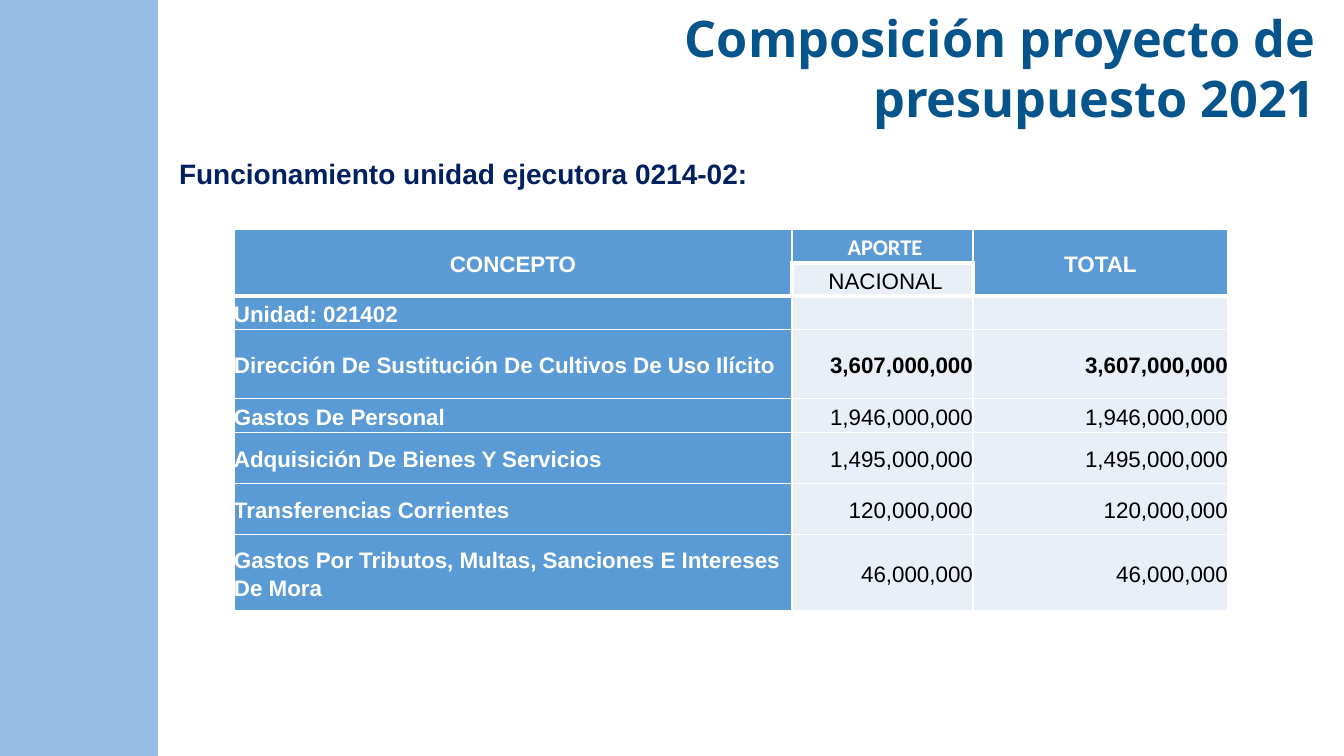
"""Builds the 2021 budget slide for unit 0214-02."""
from lxml import etree
from pptx import Presentation
from pptx import util as u
from pptx.dml.color import RGBColor
from pptx.enum import shapes, text
from pptx.oxml.ns import qn

SCALE = 914400 / 100.8
HUES = {"band": "96BDE3", "title": "05548B", "sub": "002060", "head": "5B9BD5",
        "pale": "E9EFF7", "white": "FFFFFF", "black": "000000"}
COLS = [558, 181, 255]
ROWS = [34, 33, 34, 69, 34, 51, 51, 76]
CELLS = [
    ("CONCEPTO", " APORTE", "TOTAL"),
    ("", " NACIONAL", ""),
    ("Unidad: 021402", "", ""),
    ("Dirección De Sustitución De Cultivos De Uso Ilícito", "3,607,000,000", "3,607,000,000"),
    ("Gastos De Personal", "1,946,000,000", "1,946,000,000"),
    ("Adquisición De Bienes Y Servicios", "1,495,000,000", "1,495,000,000"),
    ("Transferencias Corrientes", "120,000,000", "120,000,000"),
    ("Gastos Por Tributos, Multas, Sanciones E Intereses De Mora", "46,000,000", "46,000,000"),
]


def px(n):
    return u.Emu(round(n * SCALE))


def hue(name):
    return RGBColor.from_string(HUES[name])


def style(para, font, size, color, bold, align):
    para.alignment = align
    for run in para.runs:
        run.font.name, run.font.size, run.font.bold = font, u.Pt(size), bold
        run.font.color.rgb = hue(color)


def write(shape, box, words, font, size, color, align):
    shape.left, shape.top, shape.width, shape.height = map(px, box)
    frame = shape.text_frame
    frame.text = words
    frame.word_wrap = True
    frame.auto_size = text.MSO_AUTO_SIZE.NONE
    frame.vertical_anchor = text.MSO_ANCHOR.TOP
    frame.margin_left = frame.margin_right = px(5)
    frame.margin_top = frame.margin_bottom = px(5)
    style(frame.paragraphs[0], font, size, color, True, align)


def band(slide, box):
    rect = slide.shapes.add_shape(shapes.MSO_SHAPE.RECTANGLE, *map(px, box))
    rect.shadow.inherit = False
    rect.fill.solid()
    rect.fill.fore_color.rgb = hue("band")
    rect.line.fill.background()


def edge(cell, thick):
    props = cell._tc.get_or_add_tcPr()
    for side in "LRTB":
        width = u.Pt(3 if side in thick else 1)
        line = etree.SubElement(props, qn(f"a:ln{side}"), w=str(width))
        fill = etree.SubElement(line, qn("a:solidFill"))
        etree.SubElement(fill, qn("a:srgbClr"), val=HUES["white"])


def fill_cell(cell, row, col, words):
    head = col == 0 or row == 0 or (row == 1 and col == 2)
    thick = {0: "B", 1: "LRTB" if col == 1 else "B", 2: "T"}.get(row, "")
    edge(cell, thick)
    cell.fill.solid()
    cell.fill.fore_color.rgb = hue("head" if head else "pale")
    cell.margin_left = cell.margin_right = cell.margin_top = cell.margin_bottom = 0
    cell.vertical_anchor = text.MSO_ANCHOR.MIDDLE
    para = cell.text_frame.paragraphs[0]
    para.text = words
    para.line_spacing = 1.15
    para.font.size = u.Pt(16)
    align = text.PP_ALIGN.RIGHT if col else text.PP_ALIGN.LEFT
    if row < 2:
        align = text.PP_ALIGN.CENTER
    font = "Calibri" if (row, col) == (0, 1) else "Arial"
    style(para, font, 16, "white" if head else "black", head or row == 3, align)


def budget(slide, left, top):
    box = map(px, (left, top, sum(COLS), sum(ROWS)))
    table = slide.shapes.add_table(len(ROWS), len(COLS), *box).table
    for col, width in zip(table.columns, COLS):
        col.width = px(width)
    for row, height in zip(table.rows, ROWS):
        row.height = px(height)
    for r, line in enumerate(CELLS):
        for c, words in enumerate(line):
            fill_cell(table.cell(r, c), r, c, words)
    for c in (0, 2):
        table.cell(0, c).merge(table.cell(1, c))


def main():
    deck = Presentation()
    deck.slide_width, deck.slide_height = px(1344), px(756)
    slide = deck.slides.add_slide(deck.slide_layouts[5])
    band(slide, (0, 0, 158, 756))
    write(slide.shapes.title, (559, 2, 762, 130), "Composición proyecto de presupuesto 2021",
          "Open Sans", 36, "title", text.PP_ALIGN.RIGHT)
    budget(slide, 234, 229)
    note = slide.shapes.add_textbox(0, 0, 0, 0)
    write(note, (174, 151, 1131, 41), "Funcionamiento unidad ejecutora 0214-02:",
          "Arial", 20, "sub", text.PP_ALIGN.JUSTIFY)
    deck.save("out.pptx")


if __name__ == "__main__":
    main()
